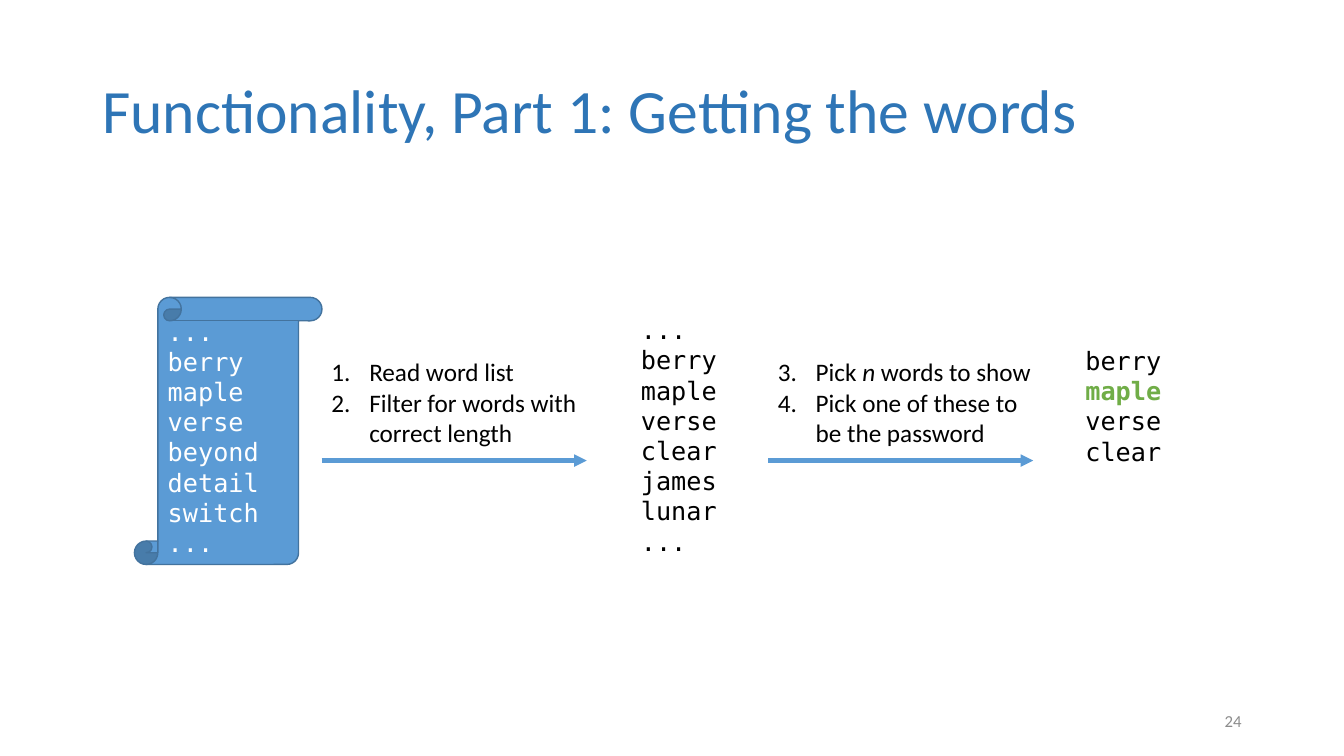
from lxml import etree
from pptx import Presentation
from pptx.dml.color import RGBColor
from pptx.enum.shapes import MSO_CONNECTOR, MSO_SHAPE
from pptx.enum.text import MSO_ANCHOR, PP_ALIGN
from pptx.oxml.ns import qn
from pptx.util import Pt

STRAIGHT = MSO_CONNECTOR.STRAIGHT
SCROLL = MSO_SHAPE.VERTICAL_SCROLL
TOP, MIDDLE = MSO_ANCHOR.TOP, MSO_ANCHOR.MIDDLE
LEFT, RIGHT = PP_ALIGN.LEFT, PP_ALIGN.RIGHT
SANS, MONO = "Calibri", "DejaVu Sans Mono"
COLORS = {
    "title": "2E75B6",
    "number": "8C8C8C",
    "scroll": "5B9BD5",
    "edge": "43739E",
    "white": "FFFFFF",
    "black": "000000",
    "password": "70AD47",
}


def color(name):
    return RGBColor.from_string(COLORS[name])


class SlideBuilder:
    """Draws styled elements on the current page, with lengths in points."""

    def __init__(self, page):
        self.page = page

    def fill_text(self, shape, lines, font=SANS, size=18, ink="black", anchor=TOP, align=LEFT):
        frame = shape.text_frame
        frame.word_wrap = True
        frame.vertical_anchor = anchor
        frame.text = "\n".join(lines)
        for para in frame.paragraphs:
            para.alignment = align
            for span in para.runs:
                span.font.name = font
                span.font.size = Pt(size)
                span.font.color.rgb = color(ink)
        return frame.paragraphs

    def text(self, left, top, width, height, lines, **style):
        box = self.page.shapes.add_textbox(Pt(left), Pt(top), Pt(width), Pt(height))
        return self.fill_text(box, lines, **style)

    def scroll(self, left, top, width, height, lines):
        shape = self.page.shapes.add_shape(SCROLL, Pt(left), Pt(top), Pt(width), Pt(height))
        shape.shadow.inherit = False
        shape.fill.solid()
        shape.fill.fore_color.rgb = color("scroll")
        shape.line.color.rgb = color("edge")
        shape.line.width = Pt(1)
        self.fill_text(shape, lines, font=MONO, ink="white", anchor=MIDDLE)

    def arrow(self, left, top, length):
        connector = self.page.shapes.add_connector(
            STRAIGHT, Pt(left), Pt(top), Pt(left + length), Pt(top))
        connector.line.color.rgb = color("scroll")
        connector.line.width = Pt(3)
        properties = connector._element.spPr
        etree.SubElement(properties.find(qn("a:ln")), qn("a:tailEnd"), type="triangle")
        etree.SubElement(properties, qn("a:effectLst"))

    def steps(self, left, top, width, height, lines, start):
        paras = self.text(left, top, width, height, lines)
        for para in paras:
            properties = para._p.get_or_add_pPr()
            properties.set("marL", str(Pt(27)))
            properties.set("indent", str(-Pt(27)))
            etree.SubElement(properties, qn("a:buFont"), typeface="+mj-lt")
            etree.SubElement(properties, qn("a:buAutoNum"), type="arabicPeriod", startAt=str(start))
        return paras


def main():
    deck = Presentation()
    deck.slide_width, deck.slide_height = Pt(960), Pt(540)
    builder = SlideBuilder(deck.slides.add_slide(deck.slide_layouts[6]))

    title = builder.text(66, 28.8, 828, 104.4, ["Functionality, Part 1: Getting the words"],
                         size=44, ink="title", anchor=MIDDLE)
    title[0].line_spacing = 0.9
    builder.text(678, 500.4, 216, 28.8, ["24"], size=12, ink="number",
                 anchor=MIDDLE, align=RIGHT)

    picked = ["berry", "maple", "verse"]
    builder.scroll(96, 212.4, 134, 190.8,
                   ["...", *picked, "beyond", "detail", "switch", "..."])
    builder.text(450.7, 221, 118, 181.4,
                 ["...", *picked, "clear", "james", "lunar", "..."], font=MONO)
    shown = builder.text(768.2, 243, 118, 94.6, [*picked, "clear"], font=MONO)
    password = shown[1].runs[0].font
    password.bold = True
    password.color.rgb = color("password")

    for left in (229.7, 548.6):
        builder.arrow(left, 329, 189.4)
    builder.steps(229.7, 251.3, 189.4, 94.3,
                  ["Read word list", "Filter for words with correct length"], 1)
    choices = builder.steps(548.6, 251.3, 206.6, 72.7,
                            ["Pick ", "Pick one of these to be the password"], 3)
    for words, slanted in (("n", True), (" words to show", False)):
        span = choices[0].add_run()
        span.text = words
        span.font.name = SANS
        span.font.size = Pt(18)
        span.font.italic = slanted
        span.font.color.rgb = color("black")

    deck.save("out.pptx")


if __name__ == "__main__":
    main()
